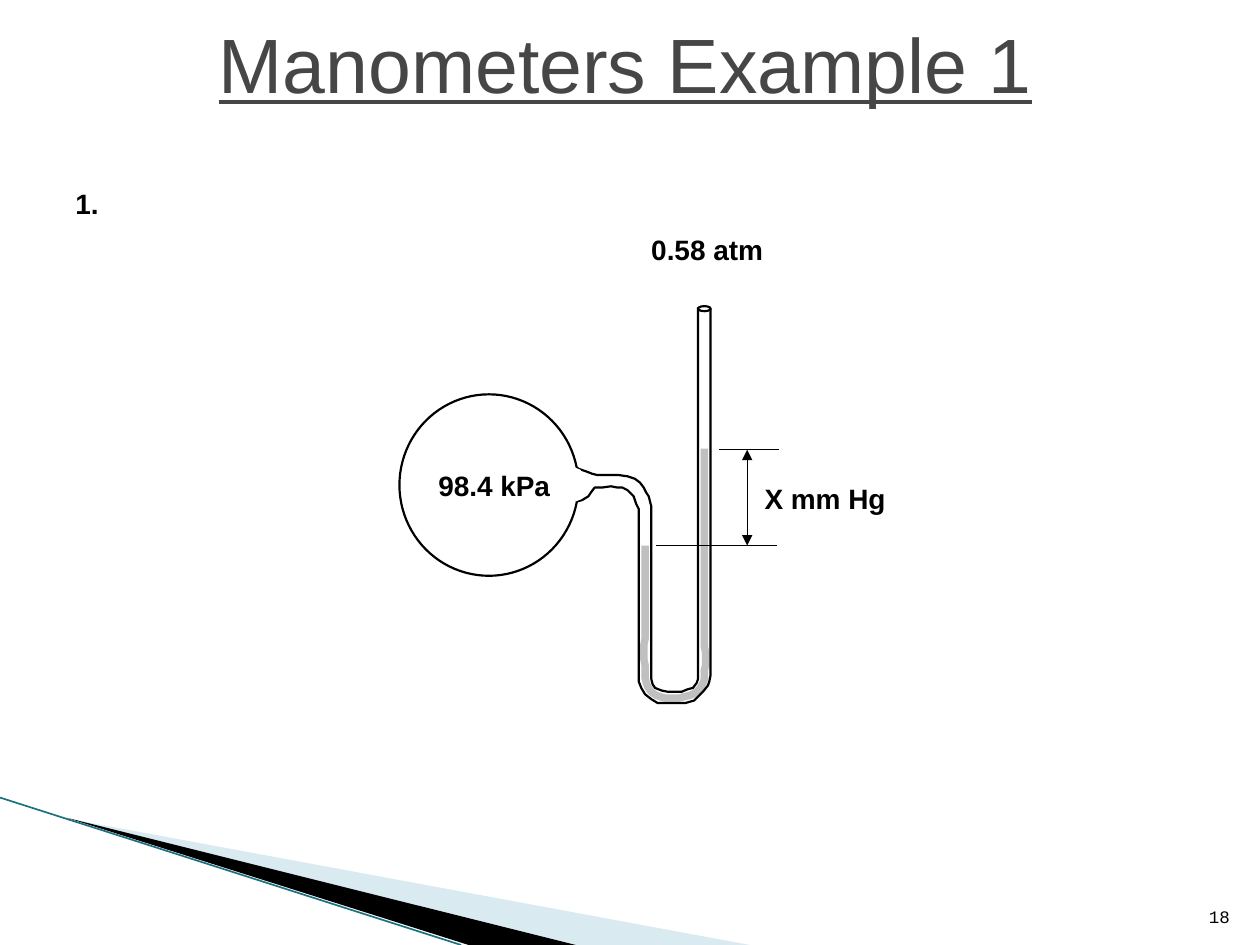
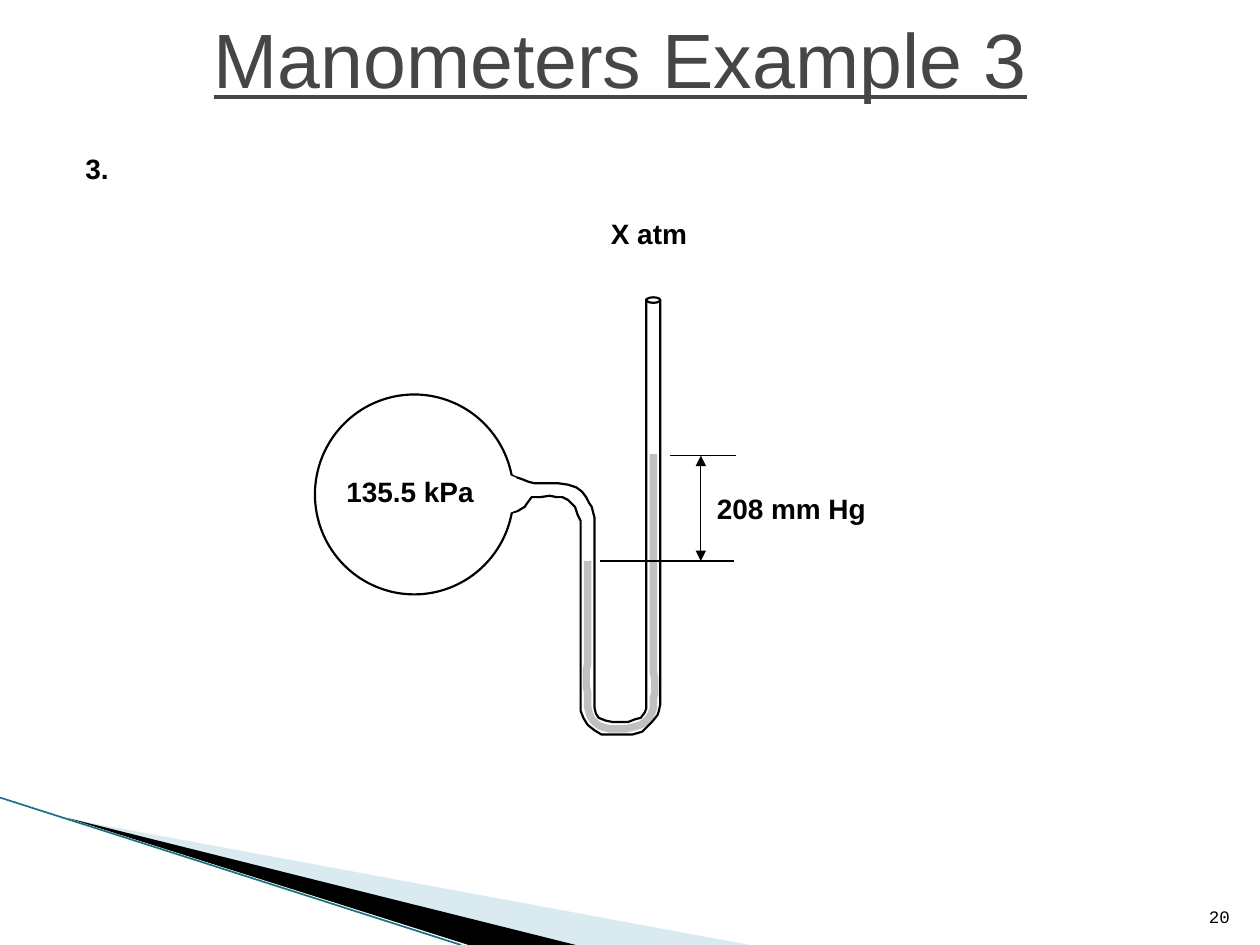
from pptx import Presentation
from pptx import util as u
from pptx.dml.color import RGBColor
from pptx.enum import shapes, text
from pptx.oxml import ns, xmlchemy

PX = 9144  # 100 px to the inch
COLORS = {"black": "000000", "white": "FFFFFF", "title": "464646",
          "mercury": "C0C0C0", "pale": "A0CBDC", "edge": "1B7083"}

# Shared bands at the foot of each slide
PALE_BAND = [(55, 650), (595, 750), (456, 750)]
BLACK_BAND = [(53, 649), (457, 750), (372, 750)]
BAND_EDGE = (0, 633, 366, 750)

# Manometer outlines, drawn at the size used on the first slide
OUTER_TUBE = [(564, 245), (564, 536), (563, 541), (562, 544), (558, 549), (555, 552),
              (551, 556), (544, 558), (528, 558), (522, 558), (517, 555), (512, 551),
              (509, 546), (507, 541), (507, 404), (505, 400), (503, 394), (501, 392),
              (498, 389), (494, 387), (490, 387), (485, 386), (478, 387), (472, 387),
              (469, 391), (467, 394), (462, 397), (458, 398)]
INNER_TUBE = [(554, 244), (554, 539), (553, 542), (550, 546), (546, 547), (541, 549),
              (530, 549), (525, 548), (520, 546), (518, 543), (517, 539), (517, 402),
              (516, 398), (515, 394), (513, 391), (511, 387), (508, 383), (504, 380),
              (498, 378), (491, 377), (474, 377), (470, 376), (465, 374), (459, 372),
              (458, 371)]
NECK_OPENING = [(456, 371), (461, 373), (462, 396), (457, 398)]
BULB = (317, 313, 142, 144)
TUBE_MOUTH = (554, 243, 10, 4)
LEVEL_MARKS = [(571, 357, 618, 357), (521, 433, 617, 433)]
HEIGHT_ARROW = (593, 357, 593, 433)

# Mercury column: Bezier segments sampled into short straight steps
MERCURY_CURVES = [((512, 442), (511, 471), (512, 491)),
                  ((512, 510), (509, 539), (516, 548)),
                  ((523, 557), (548, 556), (555, 547)),
                  ((562, 537), (559, 524), (559, 492)),
                  ((560, 460), (559, 385), (559, 356))]
mercury = [(512, 433)]
for control_1, control_2, end in MERCURY_CURVES:
    start = mercury[-1]
    for step in range(1, 13):
        t = step / 12
        mercury.append(tuple(
            round((1 - t) ** 3 * a + 3 * t * (1 - t) ** 2 * b + 3 * t * t * (1 - t) * c + t ** 3 * d, 2)
            for a, b, c, d in zip(start, control_1, control_2, end)))

# What differs between the slides; boxes are left, top, width, height
EXAMPLES = [
    {"title": "Manometers Example 1", "title_box": (159, 0, 675, 100), "page": "18",
     "drawing_box": (317, 243, 301, 315),
     "labels": [("98.4 kPa", 338, 367, 109), ("X mm Hg", 597, 377, 116),
                ("0.58 atm", 507, 180, 109), ("1.", 50, 143, 39)]},
    {"title": "Manometers Example 3", "title_box": (155, 0, 675, 92), "page": "20",
     "drawing_box": (250, 236, 334, 347),
     "labels": [("135.5 kPa", 265, 372, 121), ("208 mm Hg", 559, 385, 139),
                ("X atm", 475, 167, 81), ("3.", 58, 115, 39)]},
]


def write_text(shape, words, size, font="Arial", color="black", bold=False, underline=False,
               align=text.PP_ALIGN.LEFT, anchor=text.MSO_ANCHOR.TOP, wrap=True):
    frame = shape.text_frame
    frame.word_wrap = wrap
    frame.auto_size = text.MSO_AUTO_SIZE.NONE if wrap else text.MSO_AUTO_SIZE.SHAPE_TO_FIT_TEXT
    frame.vertical_anchor = anchor
    paragraph = frame.paragraphs[0]
    paragraph.alignment = align
    run = paragraph.add_run()
    run.text = words
    run.font.name, run.font.size = font, u.Pt(size)
    run.font.bold, run.font.underline = bold, underline
    run.font.color.rgb = RGBColor.from_string(COLORS[color])


def draw(container, kind, geometry, fill=None, line=None, width=1.25):
    """Add a path, polygon, ellipse or straight line in px."""
    if kind == "line":
        shape = container.add_connector(shapes.MSO_CONNECTOR.STRAIGHT, *(v * PX for v in geometry))
    elif kind == "ellipse":
        shape = container.add_shape(shapes.MSO_SHAPE.OVAL, *(v * PX for v in geometry))
    else:
        builder = container.build_freeform(*geometry[0], scale=PX)
        builder.add_line_segments(geometry[1:], close=kind == "polygon")
        shape = builder.convert_to_shape()
    if line:
        shape.line.color.rgb = RGBColor.from_string(COLORS[line])
        shape.line.width = u.Pt(width)
    else:
        shape.line.fill.background()
    if kind == "line":
        xmlchemy.OxmlElement  # connectors take an empty effect list instead of a shadow switch
        shape._element.spPr.append(xmlchemy.OxmlElement("a:effectLst"))
        return shape
    shape.shadow.inherit = False
    if fill:
        shape.fill.solid()
        shape.fill.fore_color.rgb = RGBColor.from_string(COLORS[fill])
    else:
        shape.fill.background()
    return shape


presentation = Presentation()
presentation.slide_width, presentation.slide_height = 1000 * PX, 750 * PX

for example in EXAMPLES:
    slide = presentation.slides.add_slide(presentation.slide_layouts[5])

    # Bands and page number
    pale = draw(slide.shapes, "polygon", PALE_BAND, fill="pale")
    alpha = xmlchemy.OxmlElement("a:alpha")
    alpha.set("val", "40000")
    pale._element.spPr.find(".//" + ns.qn("a:srgbClr")).append(alpha)
    draw(slide.shapes, "polygon", BLACK_BAND, fill="black")
    draw(slide.shapes, "line", BAND_EDGE, line="edge", width=0.95)
    page = slide.shapes.add_textbox(946 * PX, 701 * PX, 40 * PX, 40 * PX)
    write_text(page, example["page"], 10, font="Courier New",
               align=text.PP_ALIGN.RIGHT, anchor=text.MSO_ANCHOR.BOTTOM)

    # Manometer, grouped so that it can be resized as a whole
    manometer = slide.shapes.add_group_shape()
    parts = manometer.shapes
    draw(parts, "path", mercury, line="mercury", width=4.25)
    draw(parts, "ellipse", BULB, line="black")
    draw(parts, "path", OUTER_TUBE, line="black")
    draw(parts, "path", INNER_TUBE, line="black")
    draw(parts, "polygon", NECK_OPENING, fill="white")
    draw(parts, "ellipse", TUBE_MOUTH, line="black")
    for mark in LEVEL_MARKS:
        draw(parts, "line", mark, line="black", width=0.75)
    arrow = draw(parts, "line", HEIGHT_ARROW, line="black", width=0.75)
    for end_name in ("a:headEnd", "a:tailEnd"):
        arrowhead = xmlchemy.OxmlElement(end_name)
        arrowhead.set("type", "triangle")
        arrow.line._get_or_add_ln().append(arrowhead)
    manometer.left, manometer.top, manometer.width, manometer.height = (
        v * PX for v in example["drawing_box"])

    # Labels
    for words, left, top, width in example["labels"]:
        label = slide.shapes.add_textbox(left * PX, top * PX, width * PX, 37 * PX)
        write_text(label, words, 16, bold=True, wrap=False)

    # Title
    title = slide.shapes.title
    title.left, title.top, title.width, title.height = (v * PX for v in example["title_box"])
    write_text(title, example["title"], 44, color="title", underline=True,
               align=text.PP_ALIGN.CENTER, anchor=text.MSO_ANCHOR.MIDDLE)

presentation.save("out.pptx")
